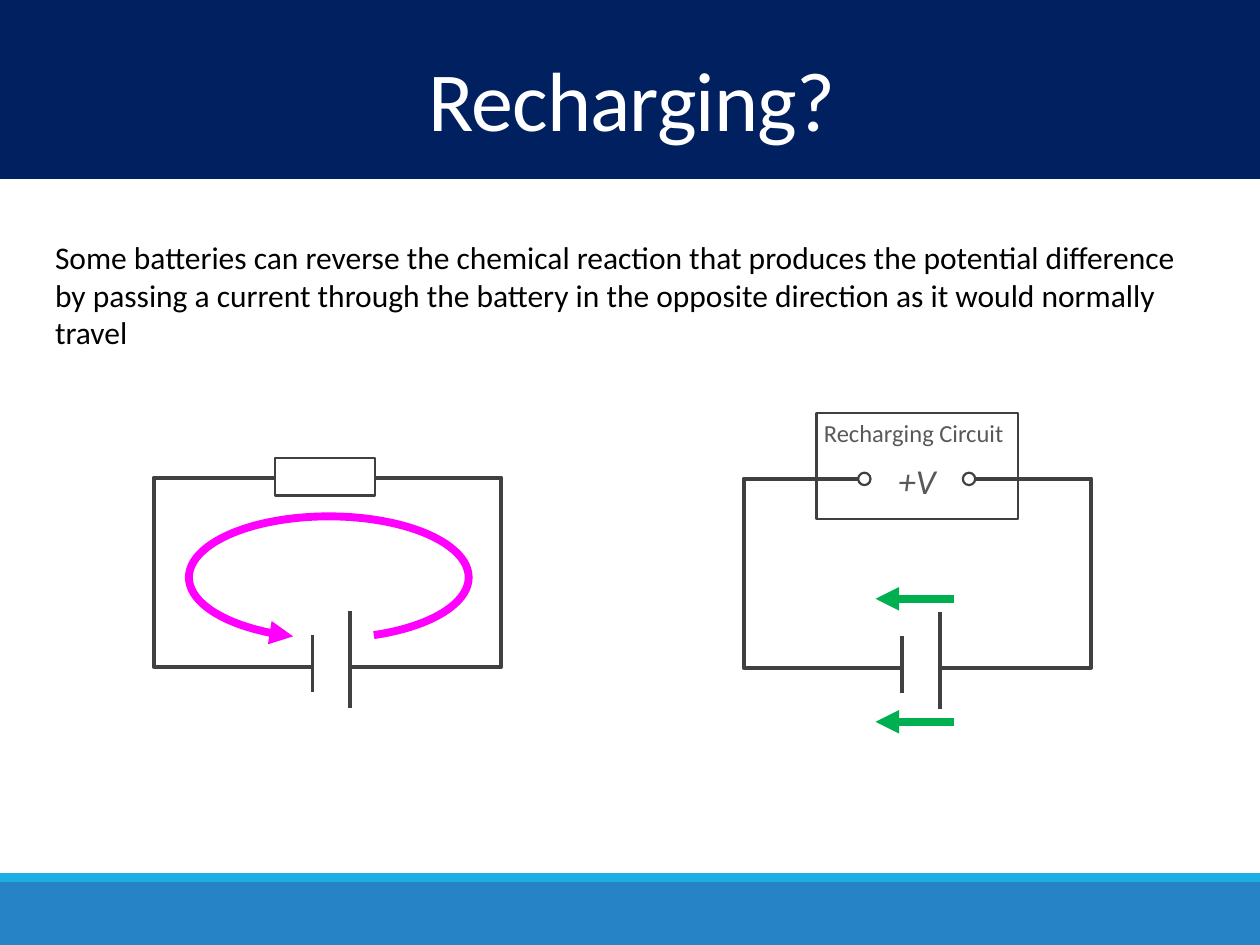
from pptx import Presentation
from pptx.dml.color import RGBColor
from pptx.enum.shapes import MSO_CONNECTOR, MSO_SHAPE
from pptx.enum.text import MSO_ANCHOR, PP_ALIGN
from pptx.oxml.ns import qn
from pptx.util import Cm, Pt
from lxml.etree import SubElement

THEME = {
    "font": "Calibri", "white": "FFFFFF", "black": "000000", "navy": "002060",
    "blue": "2683C6", "sky": "1CADE4", "wire": "404040", "label": "595959",
    "current": "FF00FF", "charge": "00B050",
    "title": 48, "body": 18, "caption": 14, "voltage": 20,
    "thin": 1.25, "thick": 2.25, "arrow": 4.5,
}

TITLE = "Recharging?"
BODY = ("Some batteries can reverse the chemical reaction that produces the "
        "potential difference by passing a current through the battery in the "
        "opposite direction as it would normally travel")

# All lengths are in centimetres: left, top, width, height
BANDS = [((0, 17.78, 25.4, 1.27), "blue"),
         ((0, 17.6, 25.4, 0.18), "sky"),
         ((0, 0, 25.4, 3.61), "navy")]
TITLE_BOX = (0.08, 1.07, 25.32, 2.13)
BODY_BOX = (0.86, 4.67, 23.75, 1.8)
LABELS = [("Recharging Circuit", (16.36, 8.31, 4.17, 0.86), "caption", False),
          ("+V", (17.86, 9.14, 1.27, 1.12), "voltage", True)]

DISCHARGE_AT, RECHARGE_AT = (3.1, 9.63), (14.99, 9.65)
LOOP_SIZE = (7.01, 3.81)
CELL_GAP = (3.2, 3.43, 0.76, 0.66)                     # relative to the loop
CELL_PLATES = [(3.96, 2.69, 4.65), (3.2, 3.18, 4.32)]  # x, top, bottom
RESISTOR = (5.55, 9.23, 2.01, 0.76)
CHARGER = (16.46, 8.33, 4.06, 2.13)
CHARGER_GAP = (17.3, 8.76, 2.36, 1.24)
TERMINAL_XS, TERMINAL_Y, TERMINAL = (17.3, 19.41), 9.53, 0.25
CURRENT_ARC, ARC_DEGREES = (3.81, 10.41, 5.64, 2.46), (121.16, 52.05)
CHARGE_FROM, CHARGE_TO, CHARGE_YS = 19.23, 17.65, (12.07, 14.55)


def color(name):
    return RGBColor.from_string(THEME[name])


def add_shape(s, kind, box, fill=None, line=None, width="thin"):
    sp = s.shapes.add_shape(kind, *map(Cm, box))
    sp.shadow.inherit = False
    if fill:
        sp.fill.solid()
        sp.fill.fore_color.rgb = color(fill)
    else:
        sp.fill.background()
    if line:
        sp.line.color.rgb = color(line)
        sp.line.width = Pt(THEME[width])
    else:
        sp.line.fill.background()
    return sp


def add_line(s, start, end, line, width):
    cx = s.shapes.add_connector(MSO_CONNECTOR.STRAIGHT, *map(Cm, start + end))
    cx.line.color.rgb = color(line)
    cx.line.width = Pt(THEME[width])
    SubElement(cx._element.spPr, qn("a:effectLst"))
    return cx


def add_arrowhead(sp, end):
    """Put a triangle on the line's "headEnd" (start) or "tailEnd" (finish)."""
    SubElement(sp.line._get_or_add_ln(), qn(f"a:{end}")).set("type", "triangle")


def write(tf, text, size, ink, italic=False):
    tf.text = text
    font = tf.paragraphs[0].runs[0].font
    font.name, font.size = THEME["font"], Pt(THEME[size])
    font.color.rgb = color(ink)
    if italic:
        font.italic = True


def add_text(s, box, text, size, ink, wrap=False, italic=False):
    tf = s.shapes.add_textbox(*map(Cm, box)).text_frame
    tf.word_wrap = wrap
    write(tf, text, size, ink, italic)


def add_title(s):
    title = s.shapes.title
    title.left, title.top, title.width, title.height = map(Cm, TITLE_BOX)
    tf = title.text_frame
    write(tf, TITLE, "title", "white")
    tf.vertical_anchor = MSO_ANCHOR.MIDDLE
    p = tf.paragraphs[0]
    p.alignment, p.line_spacing = PP_ALIGN.CENTER, 0.85
    p.runs[0].font._element.set("spc", "-50")
    s.shapes._spTree.append(title._element)  # in front of the navy band


def add_circuit(s, origin, fill=None):
    """Draw a wire loop with a cell in its lower side."""
    x, y = origin
    add_shape(s, MSO_SHAPE.RECTANGLE, origin + LOOP_SIZE, fill, "wire", "thick")
    dx, dy, w, h = CELL_GAP
    add_shape(s, MSO_SHAPE.RECTANGLE, (x + dx, y + dy, w, h), "white")
    for px, top, bottom in CELL_PLATES:
        add_line(s, (x + px, y + bottom), (x + px, y + top), "wire", "thick")


def main():
    prs = Presentation()
    prs.slide_width, prs.slide_height = Cm(25.4), Cm(19.05)
    s = prs.slides.add_slide(prs.slide_layouts[5])

    for box, fill in BANDS:
        add_shape(s, MSO_SHAPE.RECTANGLE, box, fill)
    add_title(s)

    add_circuit(s, DISCHARGE_AT, "white")
    for box in (CHARGER, RESISTOR):
        add_shape(s, MSO_SHAPE.RECTANGLE, box, "white", "wire")

    add_circuit(s, RECHARGE_AT)
    add_shape(s, MSO_SHAPE.RECTANGLE, CHARGER_GAP, "white")
    for x in TERMINAL_XS:
        add_shape(s, MSO_SHAPE.OVAL, (x, TERMINAL_Y, TERMINAL, TERMINAL), line="wire")

    for text, box, size, italic in LABELS:
        add_text(s, box, text, size, "label", italic=italic)
    add_text(s, BODY_BOX, BODY, "body", "black", wrap=True)

    arc = add_shape(s, MSO_SHAPE.ARC, CURRENT_ARC, line="current", width="arrow")
    for i, degrees in enumerate(ARC_DEGREES):
        arc.adjustments[i] = degrees * 0.6  # 60000 units a degree, scaled by 100000
    add_arrowhead(arc, "headEnd")
    for y in CHARGE_YS:
        arrow = add_line(s, (CHARGE_FROM, y), (CHARGE_TO, y), "charge", "arrow")
        add_arrowhead(arrow, "tailEnd")

    prs.save("out.pptx")


if __name__ == "__main__":
    main()
